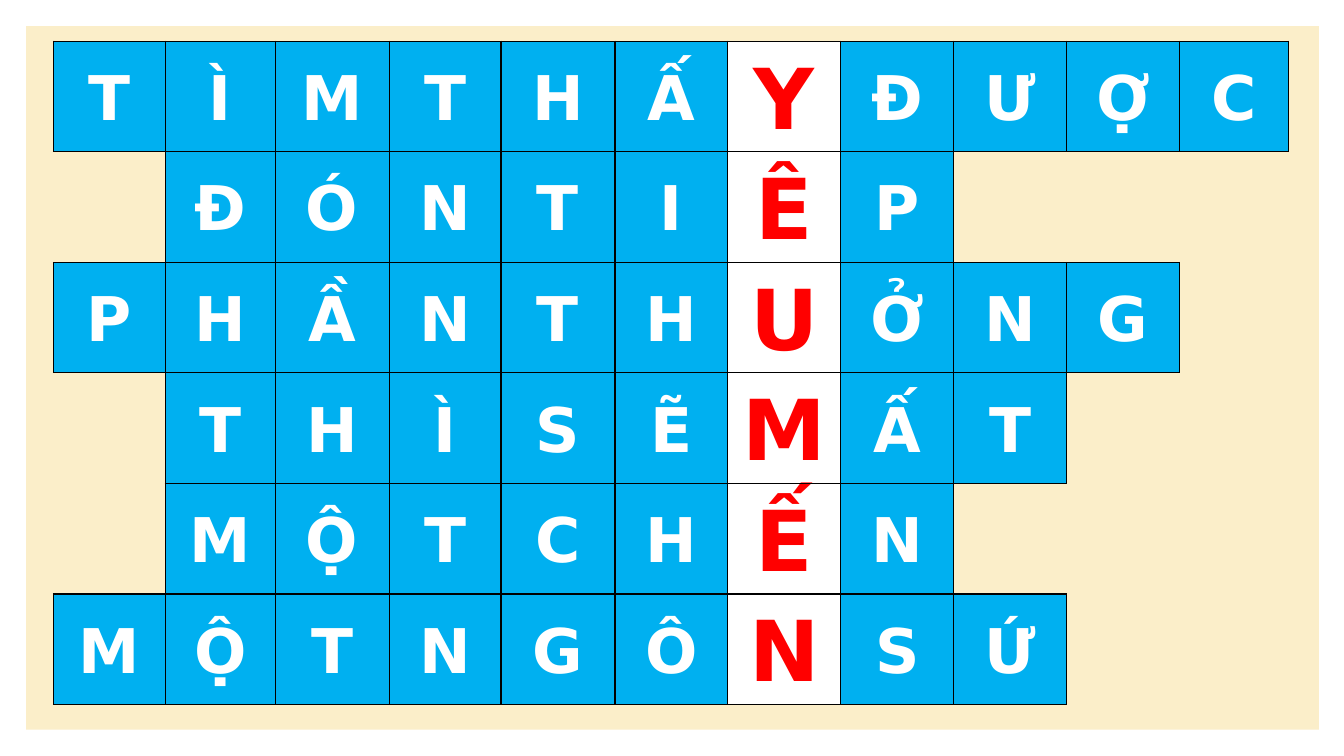
from typing import NamedTuple

from lxml import etree
from pptx import Presentation
from pptx import util as u
from pptx.dml.color import RGBColor
from pptx.enum import shapes, text
from pptx.oxml.ns import qn

BLUE, WHITE, RED, BLACK, CREAM = "00B0F0", "FFFFFF", "FF0000", "000000", "FBEEC9"
FONT = "DejaVu Sans"
NO_STYLE = "{2D5ABB26-0587-4C30-8999-92F81FD0307C}"
KEY_COL = 6
COL_WIDTHS = [1.11, 1.09, 1.13, 1.11, 1.13, 1.12, 1.12, 1.12, 1.12, 1.12, 1.08]
TABLE_HEIGHT = 6.58


class Answer(NamedTuple):
    start: int
    letters: str


ANSWERS = [
    Answer(0, "TÌMTHẤYĐƯỢC"),
    Answer(1, "ĐÓNTIÊP"),
    Answer(0, "PHẦNTHUỞNG"),
    Answer(1, "THÌSẼMẤT"),
    Answer(1, "MỘTCHẾN"),
    Answer(0, "MỘTNGÔNSỨ"),
]


def color(value: str) -> RGBColor:
    return RGBColor.from_string(value)


def letter_at(row: int, col: int) -> str:
    """Return the letter of a crossword square, or "" outside the answers."""
    if not 0 <= row < len(ANSWERS):
        return ""
    answer = ANSWERS[row]
    i = col - answer.start
    return answer.letters[i] if 0 <= i < len(answer.letters) else ""


def add_border(cell, side: str, visible: bool) -> None:
    ln = etree.SubElement(cell._tc.get_or_add_tcPr(), qn(f"a:ln{side}"), w=str(u.Pt(1)))
    if visible:
        fill = etree.SubElement(ln, qn("a:solidFill"))
        etree.SubElement(fill, qn("a:srgbClr"), val=BLACK)
    else:
        etree.SubElement(ln, qn("a:noFill"))


def draw_square(cell, row: int, col: int) -> None:
    letter = letter_at(row, col)
    neighbours = {"L": (row, col - 1), "R": (row, col + 1),
                  "T": (row - 1, col), "B": (row + 1, col)}
    for side, place in neighbours.items():
        add_border(cell, side, bool(letter or letter_at(*place)))
    if not letter:
        cell.fill.background()
        return

    is_key = col == KEY_COL
    cell.fill.solid()
    cell.fill.fore_color.rgb = color(WHITE if is_key else BLUE)
    cell.vertical_anchor = text.MSO_ANCHOR.MIDDLE
    cell.margin_left = cell.margin_right = u.Inches(0.07)
    cell.margin_top = cell.margin_bottom = 0
    cell.text_frame.text = letter
    p = cell.text_frame.paragraphs[0]
    p.alignment = text.PP_ALIGN.CENTER
    p.line_spacing = 1.07
    font = p.runs[0].font
    font.name, font.bold = FONT, True
    font.size = u.Pt(60 if is_key else 44)
    font.color.rgb = color(RED if is_key else WHITE)


def main() -> None:
    prs = Presentation()
    prs.slide_width, prs.slide_height = u.Inches(13.33), u.Inches(7.5)
    s = prs.slides.add_slide(prs.slide_layouts[6])

    # Cream panel
    sp = s.shapes.add_shape(shapes.MSO_SHAPE.RECTANGLE, u.Inches(0.26), u.Inches(0.26),
                            u.Inches(12.82), u.Inches(6.98))
    sp.shadow.inherit = False
    sp.fill.solid()
    sp.fill.fore_color.rgb = color(CREAM)
    sp.line.fill.background()

    # Crossword grid
    frame = s.shapes.add_table(len(ANSWERS), len(COL_WIDTHS), u.Inches(0.53), u.Inches(0.41),
                               u.Inches(sum(COL_WIDTHS)), u.Inches(TABLE_HEIGHT))
    table = frame.table
    table.first_row = table.horz_banding = False
    table._tbl.tblPr.find(qn("a:tableStyleId")).text = NO_STYLE
    for column, width in zip(table.columns, COL_WIDTHS):
        column.width = u.Inches(width)
    for row in range(len(ANSWERS)):
        for col in range(len(COL_WIDTHS)):
            draw_square(table.cell(row, col), row, col)

    prs.save("out.pptx")


if __name__ == "__main__":
    main()
